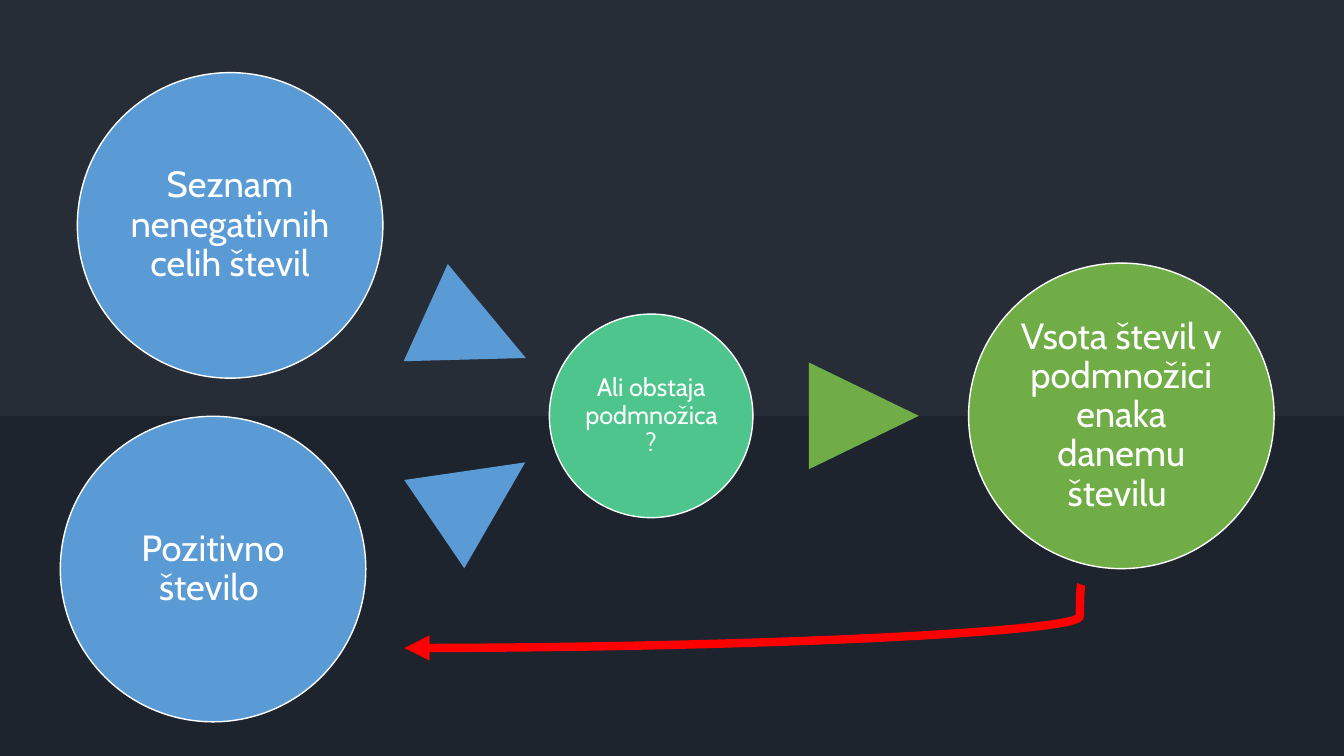
from dataclasses import dataclass

import lxml.etree
import pptx
import pptx.dml.color
import pptx.enum.shapes
import pptx.enum.text
import pptx.oxml.ns
import pptx.util

Cm = pptx.util.Cm
Kind = pptx.enum.shapes.MSO_SHAPE
qn = pptx.oxml.ns.qn


@dataclass(frozen=True)
class Theme:
    back: str = "1D242E"
    band: str = "E4E8EE"
    blue: str = "5B9BD5"
    mint: str = "4DC58D"
    green: str = "70AD47"
    red: str = "FF0000"
    white: str = "FFFFFF"
    font: str = "Cabin"
    large: int = 26
    small: int = 18


@dataclass(frozen=True)
class Disc:
    text: str
    x: float  # centre
    y: float
    width: float
    fill: str
    size: int
    inset: float


@dataclass(frozen=True)
class Wedge:
    x: float  # centre
    y: float
    turn: float
    fill: str


THEME = Theme()
WIDTH, HEIGHT = 33.87, 19.05
MID = 10.48
BIG, LITTLE = 7.7, 5.13
WEDGE = (2.69, 2.77)

DISCS = [
    Disc("Seznam nenegativnih celih števil", 5.8, 5.68, BIG,
         THEME.blue, THEME.large, 0.1),
    Disc("Ali obstaja podmnožica?", 16.41, MID, LITTLE,
         THEME.mint, THEME.small, 0.08),
    Disc("Vsota števil v podmnožici enaka danemu številu ", 28.26, MID, BIG,
         THEME.green, THEME.large, 0.1),
    Disc("Pozitivno število ", 5.37, 14.34, BIG,
         THEME.blue, THEME.large, 0.08),
]
WEDGES = [
    Wedge(11.99, 8.45, 114.4, THEME.blue),
    Wedge(21.77, MID, 90, THEME.green),
    Wedge(12.09, 12.43, 55.8, THEME.blue),
]


def rgb(code: str):
    return pptx.dml.color.RGBColor.from_string(code)


def add_form(slide, kind, x: float, y: float, w: float, h: float,
             fill: str, line: str = ""):
    """Add a flat preset shape centred on x, y."""
    shape = slide.shapes.add_shape(
        kind, Cm(x - w / 2), Cm(y - h / 2), Cm(w), Cm(h))
    shape.shadow.inherit = False
    shape.fill.solid()
    shape.fill.fore_color.rgb = rgb(fill)
    if line:
        shape.line.color.rgb = rgb(line)
        shape.line.width = pptx.util.Pt(1)
    else:
        shape.line.fill.background()
    return shape


def put_text(shape, text: str, *, size: int, color: str, inset: float) -> None:
    frame = shape.text_frame
    frame.word_wrap = True
    frame.vertical_anchor = pptx.enum.text.MSO_ANCHOR.MIDDLE
    frame.margin_left = frame.margin_right = Cm(inset)
    frame.margin_top = frame.margin_bottom = Cm(inset)
    para = frame.paragraphs[0]
    para.alignment = pptx.enum.text.PP_ALIGN.CENTER
    para.line_spacing = 0.9
    run = para.add_run()
    run.text = text
    run.font.name = THEME.font
    run.font.size = pptx.util.Pt(size)
    run.font.color.rgb = rgb(color)


def add_band(slide) -> None:
    band = add_form(slide, Kind.RECTANGLE, WIDTH / 2, MID / 2,
                    WIDTH, MID, THEME.band)
    tint = band.element.spPr.find(qn("a:solidFill"))[0]
    lxml.etree.SubElement(tint, qn("a:alpha"), val="5000")


def add_disc(slide, disc: Disc) -> None:
    shape = add_form(slide, Kind.OVAL, disc.x, disc.y, disc.width,
                     disc.width, disc.fill, THEME.white)
    put_text(shape, disc.text, size=disc.size, color=THEME.white,
             inset=disc.inset)


def add_wedge(slide, wedge: Wedge) -> None:
    shape = add_form(slide, Kind.ISOSCELES_TRIANGLE, wedge.x, wedge.y,
                     *WEDGE, wedge.fill)
    shape.rotation = wedge.turn


def add_return(slide) -> None:
    """Add the curved arrow from the result back to the number."""
    arrow = slide.shapes.add_connector(
        pptx.enum.shapes.MSO_CONNECTOR.CURVE,
        Cm(27.25), Cm(14.73), Cm(10.19), Cm(16.33))
    arrow.line.color.rgb = rgb(THEME.red)
    arrow.line.width = pptx.util.Pt(6)
    props = arrow.element.spPr
    bend = props.find(qn("a:prstGeom")).find(qn("a:avLst"))
    lxml.etree.SubElement(bend, qn("a:gd"), name="adj1", fmla="val 200")
    lxml.etree.SubElement(props.find(qn("a:ln")), qn("a:tailEnd"),
                          type="triangle")
    lxml.etree.SubElement(props, qn("a:effectLst"))


def main() -> None:
    deck = pptx.Presentation()
    deck.slide_width, deck.slide_height = Cm(WIDTH), Cm(HEIGHT)
    slide = deck.slides.add_slide(deck.slide_layouts[6])
    slide.background.fill.solid()
    slide.background.fill.fore_color.rgb = rgb(THEME.back)
    add_band(slide)
    for disc in DISCS:
        add_disc(slide, disc)
    for wedge in WEDGES:
        add_wedge(slide, wedge)
    add_return(slide)
    deck.save("out.pptx")


if __name__ == "__main__":
    main()
